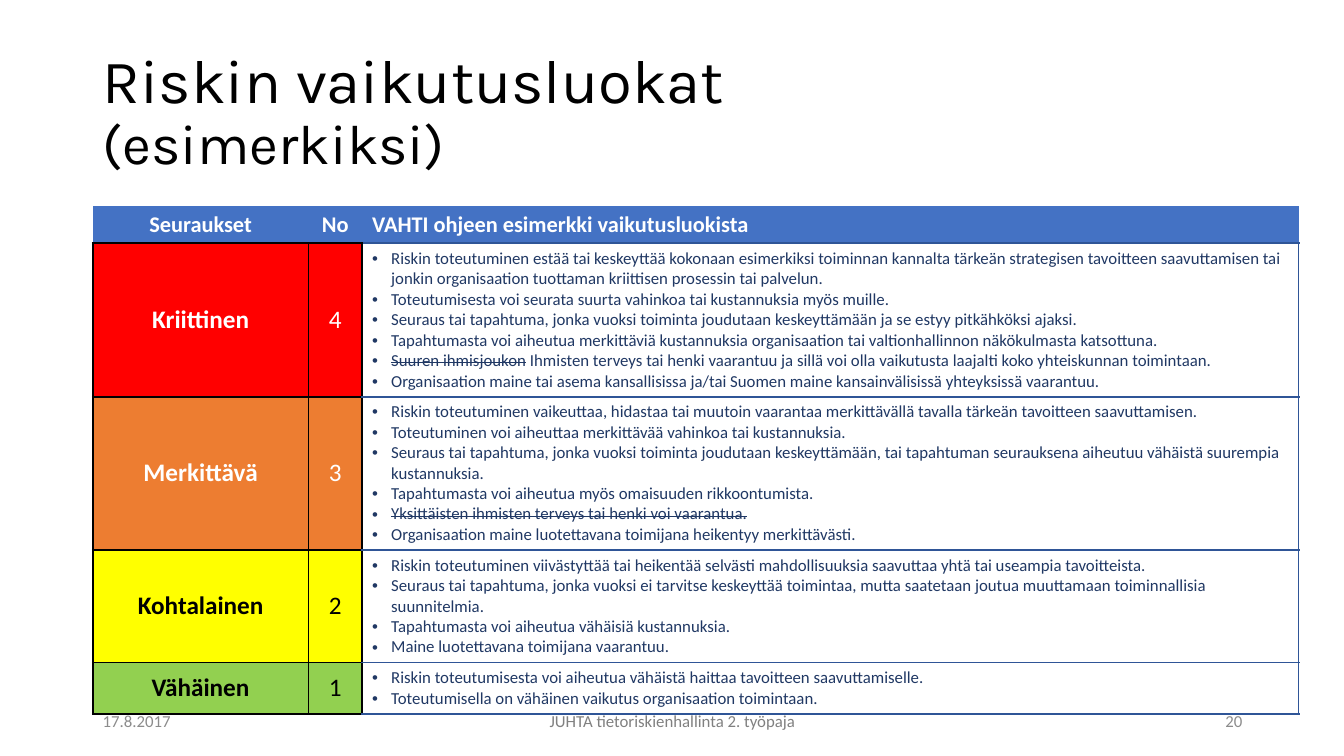
from lxml import etree
from pptx import Presentation
from pptx.dml.color import RGBColor
from pptx.enum.text import MSO_ANCHOR, MSO_AUTO_SIZE, PP_ALIGN
from pptx.oxml.ns import qn
from pptx.util import Inches, Pt

LEFT, CENTER, RIGHT = PP_ALIGN.LEFT, PP_ALIGN.CENTER, PP_ALIGN.RIGHT
MIDDLE, TOP = MSO_ANCHOR.MIDDLE, MSO_ANCHOR.TOP
NO_AUTOFIT = MSO_AUTO_SIZE.NONE
TITLE_ONLY = 5

COLORS = {
    "black": "000000", "white": "FFFFFF", "header": "4472C4",
    "edge": "2F5597", "body": "203864", "grey": "8C8C8C", "footer": "808080",
    "red": "FF0000", "orange": "ED7D31", "yellow": "FFFF00", "green": "92D050",
}
STRUCK = "~"
COLUMN_WIDTHS = (2.14, 0.53, 9.29)
HEADER_HEIGHT = 0.37
HEADERS = (("Seuraukset", CENTER), ("No", CENTER),
           ("VAHTI ohjeen esimerkki vaikutusluokista", LEFT))
IMPACT_CLASSES = (
    ("Kriittinen", "4", "red", "white", 1.52, (
        "Riskin toteutuminen estää tai keskeyttää kokonaan esimerkiksi toiminnan kannalta tärkeän "
        "strategisen tavoitteen saavuttamisen tai jonkin organisaation tuottaman kriittisen "
        "prosessin tai palvelun.",
        "Toteutumisesta voi seurata suurta vahinkoa tai kustannuksia myös muille.",
        "Seuraus tai tapahtuma, jonka vuoksi toiminta joudutaan keskeyttämään ja se estyy "
        "pitkähköksi ajaksi.",
        "Tapahtumasta voi aiheutua merkittäviä kustannuksia organisaation tai valtionhallinnon "
        "näkökulmasta katsottuna.",
        "~Suuren ihmisjoukon~ Ihmisten terveys tai henki vaarantuu ja sillä voi olla vaikutusta "
        "laajalti koko yhteiskunnan toimintaan.",
        "Organisaation maine tai asema kansallisissa ja/tai Suomen maine kansainvälisissä "
        "yhteyksissä vaarantuu.")),
    ("Merkittävä", "3", "orange", "white", 1.52, (
        "Riskin toteutuminen vaikeuttaa, hidastaa tai muutoin vaarantaa merkittävällä tavalla "
        "tärkeän tavoitteen saavuttamisen.",
        "Toteutuminen voi aiheuttaa merkittävää vahinkoa tai kustannuksia.",
        "Seuraus tai tapahtuma, jonka vuoksi toiminta joudutaan keskeyttämään, tai tapahtuman "
        "seurauksena aiheutuu vähäistä suurempia kustannuksia.",
        "Tapahtumasta voi aiheutua myös omaisuuden rikkoontumista.",
        "~Yksittäisten ihmisten terveys tai henki voi vaarantua.~",
        "Organisaation maine luotettavana toimijana heikentyy merkittävästi.")),
    ("Kohtalainen", "2", "yellow", "black", 1.11, (
        "Riskin toteutuminen viivästyttää tai heikentää selvästi mahdollisuuksia saavuttaa yhtä "
        "tai useampia tavoitteista.",
        "Seuraus tai tapahtuma, jonka vuoksi ei tarvitse keskeyttää toimintaa, mutta saatetaan "
        "joutua muuttamaan toiminnallisia suunnitelmia.",
        "Tapahtumasta voi aiheutua vähäisiä kustannuksia.",
        "Maine luotettavana toimijana vaarantuu.")),
    ("Vähäinen", "1", "green", "black", 0.51, (
        "Riskin toteutumisesta voi aiheutua vähäistä haittaa tavoitteen saavuttamiselle.",
        "Toteutumisella on vähäinen vaikutus organisaation toimintaan.")),
)
FOOTERS = (
    ("20", 9.42, 3, RIGHT, "grey"),
    ("JUHTA tietoriskienhallinta 2. työpaja", 4.42, 4.5, CENTER, "footer"),
    ("17.8.2017", 0.92, 3, LEFT, "grey"),
)


def write(paragraph, text, size=12, color="black", font="Calibri", bold=False, align=LEFT):
    """Append text to a paragraph, striking through the parts between marks."""
    paragraph.alignment = align
    for index, part in enumerate(text.split(STRUCK)):
        if not part:
            continue
        run = paragraph.add_run()
        run.text = part
        run.font.size = Pt(size)
        run.font.name = font
        run.font.bold = bold
        run.font.color.rgb = RGBColor.from_string(COLORS[color])
        if index % 2:
            run.font._element.set("strike", "sngStrike")


def add_bullet(paragraph):
    """Give a paragraph a hanging bullet and its tab stop."""
    properties = paragraph._p.get_or_add_pPr()
    properties.set("marL", str(Inches(0.19)))
    properties.set("indent", str(-Inches(0.19)))
    etree.SubElement(properties, qn("a:buFont"), typeface="Arial")
    etree.SubElement(properties, qn("a:buChar"), char="•")
    tabs = etree.SubElement(properties, qn("a:tabLst"))
    etree.SubElement(tabs, qn("a:tab"), pos=str(Inches(0.24)), algn="l")


def style_cell(cell, fill, edges, anchor=MIDDLE):
    """Set the left, right, top and bottom edges of a cell, then its fill."""
    properties = cell._tc.get_or_add_tcPr()
    for side, color in zip("LRTB", edges):
        line = etree.SubElement(properties, qn(f"a:ln{side}"), w=str(Pt(1.5)))
        if color is None:
            etree.SubElement(line, qn("a:noFill"))
        else:
            solid = etree.SubElement(line, qn("a:solidFill"))
            etree.SubElement(solid, qn("a:srgbClr"), val=COLORS[color])
    cell.fill.solid()
    cell.fill.fore_color.rgb = RGBColor.from_string(COLORS[fill])
    cell.vertical_anchor = anchor


def set_title(slide):
    """Place and fill the title placeholder."""
    title = slide.shapes.title
    title.left, title.top = Inches(0.92), Inches(0.4)
    title.width, title.height = Inches(11.5), Inches(1.45)
    frame = title.text_frame
    frame.word_wrap = True
    frame.auto_size = NO_AUTOFIT
    frame.vertical_anchor = MIDDLE
    heading = frame.paragraphs[0]
    heading.line_spacing = 0.9
    write(heading, "Riskin vaikutusluokat", size=44, font="Karla")
    heading.add_line_break()
    write(heading, "(esimerkiksi)", size=40, font="Karla")


def add_footer(slide, text, left, width, align, color):
    """Add one text of the footer line."""
    box = slide.shapes.add_textbox(Inches(left), Inches(6.95), Inches(width), Inches(0.4))
    box.text_frame.word_wrap = True
    box.text_frame.vertical_anchor = MIDDLE
    write(box.text_frame.paragraphs[0], text, color=color, align=align)


def add_impact_table(slide):
    """Add the table of impact classes."""
    heights = [HEADER_HEIGHT] + [impact[4] for impact in IMPACT_CLASSES]
    table = slide.shapes.add_table(
        len(heights), len(COLUMN_WIDTHS), Inches(0.92), Inches(2.04),
        Inches(sum(COLUMN_WIDTHS)), Inches(sum(heights))).table
    table.horz_banding = False
    for column, width in zip(table.columns, COLUMN_WIDTHS):
        column.width = Inches(width)
    for row, height in zip(table.rows, heights):
        row.height = Inches(height)

    for cell, (text, align), bottom in zip(table.rows[0].cells, HEADERS,
                                           ("black", "black", "edge")):
        style_cell(cell, "header", (None, None, None, bottom))
        write(cell.text_frame.paragraphs[0], text, size=16, color="white", bold=True, align=align)

    for row, (level, number, fill, color, _, effects) in enumerate(IMPACT_CLASSES, start=1):
        for column, label in enumerate((level, number)):
            cell = table.cell(row, column)
            style_cell(cell, fill, ("black",) * 4)
            write(cell.text_frame.paragraphs[0], label, size=18, color=color,
                  bold=column == 0, align=CENTER)
        cell = table.cell(row, 2)
        style_cell(cell, "white", ("black", "edge", "edge", "edge"), TOP)
        for index, effect in enumerate(effects):
            frame = cell.text_frame
            paragraph = frame.add_paragraph() if index else frame.paragraphs[0]
            add_bullet(paragraph)
            write(paragraph, effect, color="body")


def main():
    """Build the slide and save it."""
    deck = Presentation()
    deck.slide_width, deck.slide_height = Inches(13.33), Inches(7.5)
    slide = deck.slides.add_slide(deck.slide_layouts[TITLE_ONLY])
    set_title(slide)
    add_impact_table(slide)
    for footer in FOOTERS:
        add_footer(slide, *footer)
    deck.save("out.pptx")


if __name__ == "__main__":
    main()
